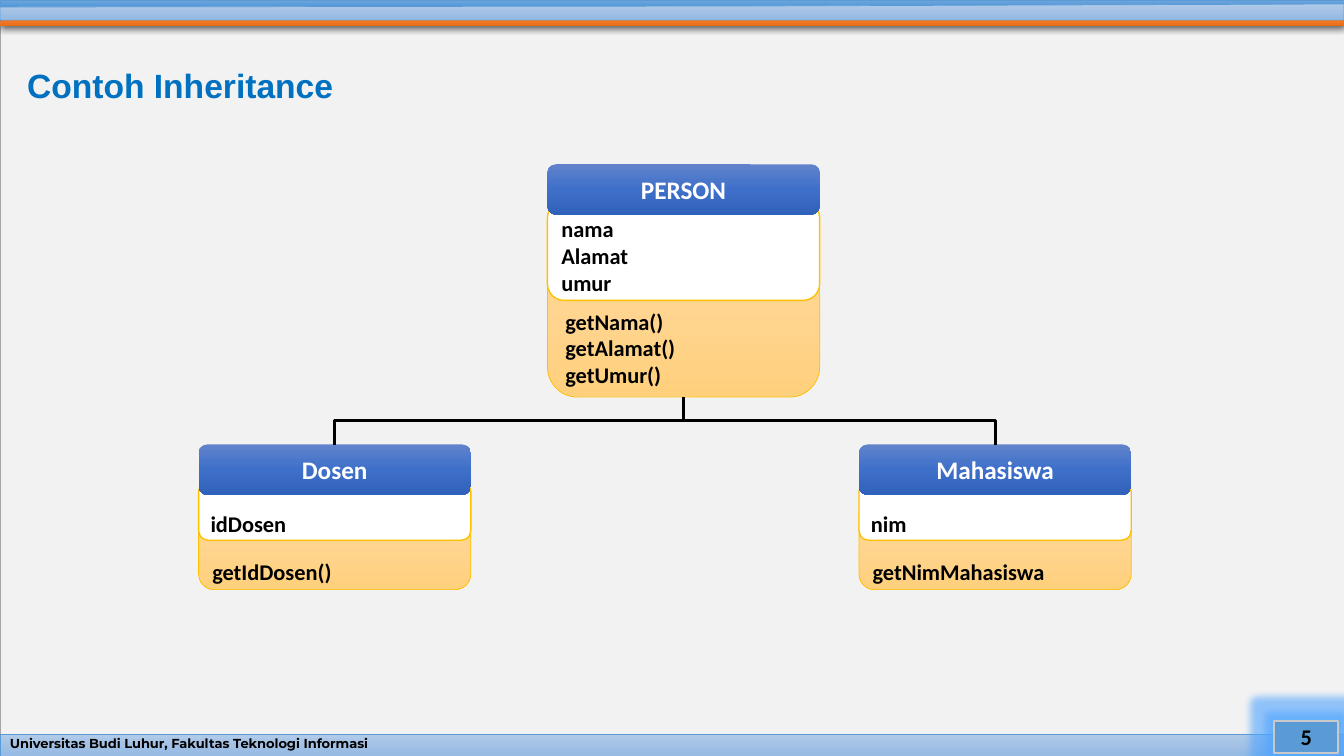
from copy import deepcopy
from dataclasses import dataclass

from lxml import etree
from pptx import Presentation
from pptx.dml.color import RGBColor
from pptx.enum.shapes import MSO_CONNECTOR, MSO_SHAPE as SHAPE
from pptx.enum.text import MSO_ANCHOR as ANCHOR, PP_ALIGN as ALIGN
from pptx.oxml import parse_xml
from pptx.oxml.ns import nsdecls, qn
from pptx.util import Inches, Pt

BLACK = RGBColor(0x00, 0x00, 0x00)
WHITE = RGBColor(0xFF, 0xFF, 0xFF)
PAGE = RGBColor(0xF2, 0xF2, 0xF2)
GRAY = RGBColor(0xA5, 0xA5, 0xA5)
SILVER = RGBColor(0xC9, 0xC9, 0xC9)
SKY = RGBColor(0x5B, 0x9B, 0xD5)
TITLE_BLUE = RGBColor(0x00, 0x70, 0xC0)
GOLD = RGBColor(0xFF, 0xC0, 0x00)
ORANGE_FADE = (RGBColor(0xF1, 0x8C, 0x57), RGBColor(0xF6, 0x7B, 0x28), RGBColor(0xE5, 0x6C, 0x19))
PALE_FADE = (RGBColor(0xB1, 0xCB, 0xE9), RGBColor(0xA3, 0xC1, 0xE5), RGBColor(0x93, 0xB9, 0xE4))
SKY_FADE = (RGBColor(0x71, 0xA6, 0xDB), RGBColor(0x55, 0x9B, 0xDB), RGBColor(0x44, 0x8A, 0xCA))
AMBER_FADE = (RGBColor(0xFF, 0xDB, 0x9E), RGBColor(0xFF, 0xD5, 0x90), RGBColor(0xFF, 0xD0, 0x7C))
BLUE_FADE = (RGBColor(0x61, 0x83, 0xCB), RGBColor(0x3E, 0x70, 0xCA), RGBColor(0x30, 0x62, 0xBB))

WIDTH, HEIGHT = 13.33, 7.5
CLASS_W, HEADER_H = 2.7, 0.5
ATTRS_DY, METHODS_DY = 0.37, 0.51


@dataclass
class ClassBox:
    name: str
    left: float
    top: float
    attrs: list[str]
    attrs_h: float
    methods: list[str]
    methods_h: float

    @property
    def center(self) -> float:
        return self.left + CLASS_W / 2

    @property
    def bottom(self) -> float:
        return self.top + METHODS_DY + self.methods_h


def paint(sp, fill, line=None, line_pt: float = 0.5) -> None:
    sp.shadow.inherit = False
    if isinstance(fill, RGBColor):
        sp.fill.solid()
        sp.fill.fore_color.rgb = fill
    else:
        sp.fill.gradient()
        sp.fill.gradient_angle = 270
        first = sp._element.spPr.find(qn("a:gradFill")).find(qn("a:gsLst"))[0]
        first.addnext(deepcopy(first))
        for i, (stop, color) in enumerate(zip(sp.fill.gradient_stops, fill)):
            stop.position = i / 2
            stop.color.rgb = color
    if line is None:
        sp.line.fill.background()
    else:
        sp.line.color.rgb = line
        sp.line.width = Pt(line_pt)


def add_box(s, kind, left: float, top: float, width: float, height: float,
            fill, line=None, line_pt: float = 0.5):
    sp = s.shapes.add_shape(kind, Inches(left), Inches(top), Inches(width), Inches(height))
    paint(sp, fill, line, line_pt)
    return sp


def add_outline(s, points: list[tuple[float, float]], fill, line=None):
    start, *rest = [(Inches(x), Inches(y)) for x, y in points]
    builder = s.shapes.build_freeform(*start)
    builder.add_line_segments(rest, close=True)
    sp = builder.convert_to_shape()
    paint(sp, fill, line)
    return sp


def write(sp, lines: list[str], size: float, color: RGBColor, font: str = "Calibri",
          align=ALIGN.LEFT, anchor=ANCHOR.MIDDLE, spacing: float = 1.0) -> None:
    tf = sp.text_frame
    tf.word_wrap = True
    tf.vertical_anchor = anchor
    for i, line in enumerate(lines):
        p = tf.add_paragraph() if i else tf.paragraphs[0]
        p.alignment = align
        p.line_spacing = spacing
        r = p.add_run()
        r.text = line
        r.font.name = font
        r.font.size = Pt(size)
        r.font.bold = True
        r.font.color.rgb = color


def add_label(s, left: float, top: float, width: float, height: float, text: str,
              size: float, color: RGBColor, font: str, spacing: float) -> None:
    sp = s.shapes.add_textbox(Inches(left), Inches(top), Inches(width), Inches(height))
    write(sp, [text], size, color, font, spacing=spacing)


def add_effect(sp, xml: str) -> None:
    sp._element.spPr.find(qn("a:effectLst")).append(parse_xml(xml))


def add_members(s, box: ClassBox, dy: float, height: float, lines: list[str],
                fill, line_pt: float):
    sp = add_box(s, SHAPE.ROUNDED_RECTANGLE, box.left, box.top + dy, CLASS_W, height,
                 fill, GOLD, line_pt)
    tf = sp.text_frame
    tf.margin_left = Inches(0.09)
    tf.margin_top = tf.margin_right = tf.margin_bottom = 0
    write(sp, lines, 16, BLACK, anchor=ANCHOR.BOTTOM)


def add_class(s, box: ClassBox) -> None:
    add_members(s, box, METHODS_DY, box.methods_h, box.methods, AMBER_FADE, 0.5)
    add_members(s, box, ATTRS_DY, box.attrs_h, box.attrs, WHITE, 1)
    header = add_box(s, SHAPE.ROUNDED_RECTANGLE, box.left, box.top, CLASS_W, HEADER_H, BLUE_FADE)
    write(header, [box.name], 18, WHITE, align=ALIGN.CENTER)


def add_branch(s, parent: ClassBox, child: ClassBox) -> None:
    span, drop = abs(child.center - parent.center), child.top - parent.bottom
    mid_x, mid_y = (parent.center + child.center) / 2, (parent.bottom + child.top) / 2
    to_right = child.center > parent.center
    half = drop / 2 if to_right else -drop / 2
    cx = s.shapes.add_connector(
        MSO_CONNECTOR.ELBOW, Inches(mid_x + half), Inches(mid_y - span / 2),
        Inches(mid_x - half), Inches(mid_y + span / 2))
    cx.line.color.rgb = BLACK
    cx.line.width = Pt(2)
    spPr = cx._element.spPr
    spPr.find(qn("a:xfrm")).set("rot", str((270 if to_right else 90) * 60000))
    etree.SubElement(spPr, qn("a:effectLst"))


def add_frame(s) -> None:
    add_box(s, SHAPE.RECTANGLE, 0, 0.04, WIDTH, HEIGHT - 0.04, PAGE, GRAY)
    stripe = add_outline(s, [(WIDTH, 0.26), (0, 0.26), (0.03, 0.13), (WIDTH, 0.13)], ORANGE_FADE)
    add_effect(stripe, f'<a:outerShdw {nsdecls("a")} blurRad="57150" dist="19050" dir="5400000" '
                       'algn="ctr" rotWithShape="0"><a:srgbClr val="000000">'
                       '<a:alpha val="63000"/></a:srgbClr></a:outerShdw>')
    add_box(s, SHAPE.RECTANGLE, 0, 7.29, WIDTH, 0.21, PALE_FADE, SKY)
    add_box(s, SHAPE.RECTANGLE, 0, 0, WIDTH, 0.11, SKY_FADE, SKY)
    add_outline(s, [(WIDTH, 0.2), (0, 0.2), (0, 0.07), (7.5, 0.06), (WIDTH, 0.04)], PALE_FADE, SKY)
    add_label(s, 0, 7.29, WIDTH, 0.21, "Universitas Budi Luhur, Fakultas Teknologi Informasi",
              9.3, BLACK, "Montserrat", 0.7)
    number = add_box(s, SHAPE.RECTANGLE, 12.64, 7.15, 0.63, 0.32, SKY, SILVER, 1.5)
    write(number, ["5"], 16, BLACK, align=ALIGN.CENTER)
    add_effect(number, f'<a:glow {nsdecls("a")} rad="139700"><a:srgbClr val="50A5FF">'
                       '<a:alpha val="60000"/></a:srgbClr></a:glow>')


def main() -> None:
    prs = Presentation()
    prs.slide_width, prs.slide_height = Inches(WIDTH), Inches(HEIGHT)
    s = prs.slides.add_slide(prs.slide_layouts[6])
    add_frame(s)
    add_label(s, 0.17, 0.53, 12.85, 0.68, "Contoh Inheritance", 24, TITLE_BLUE, "Arial", 0.9)
    person = ClassBox("PERSON", 5.43, 1.63, ["nama", "Alamat", "umur"], 0.98,
                      ["getNama()", "getAlamat()", "getUmur()"], 1.8)
    children = [
        ClassBox("Dosen", 1.97, 4.41, ["idDosen"], 0.58, ["getIdDosen()"], 0.93),
        ClassBox("Mahasiswa", 8.52, 4.41, ["nim"], 0.58, ["getNimMahasiswa"], 0.93),
    ]
    for box in [person, *children]:
        add_class(s, box)
    for child in children:
        add_branch(s, person, child)
    prs.save("out.pptx")


if __name__ == "__main__":
    main()
